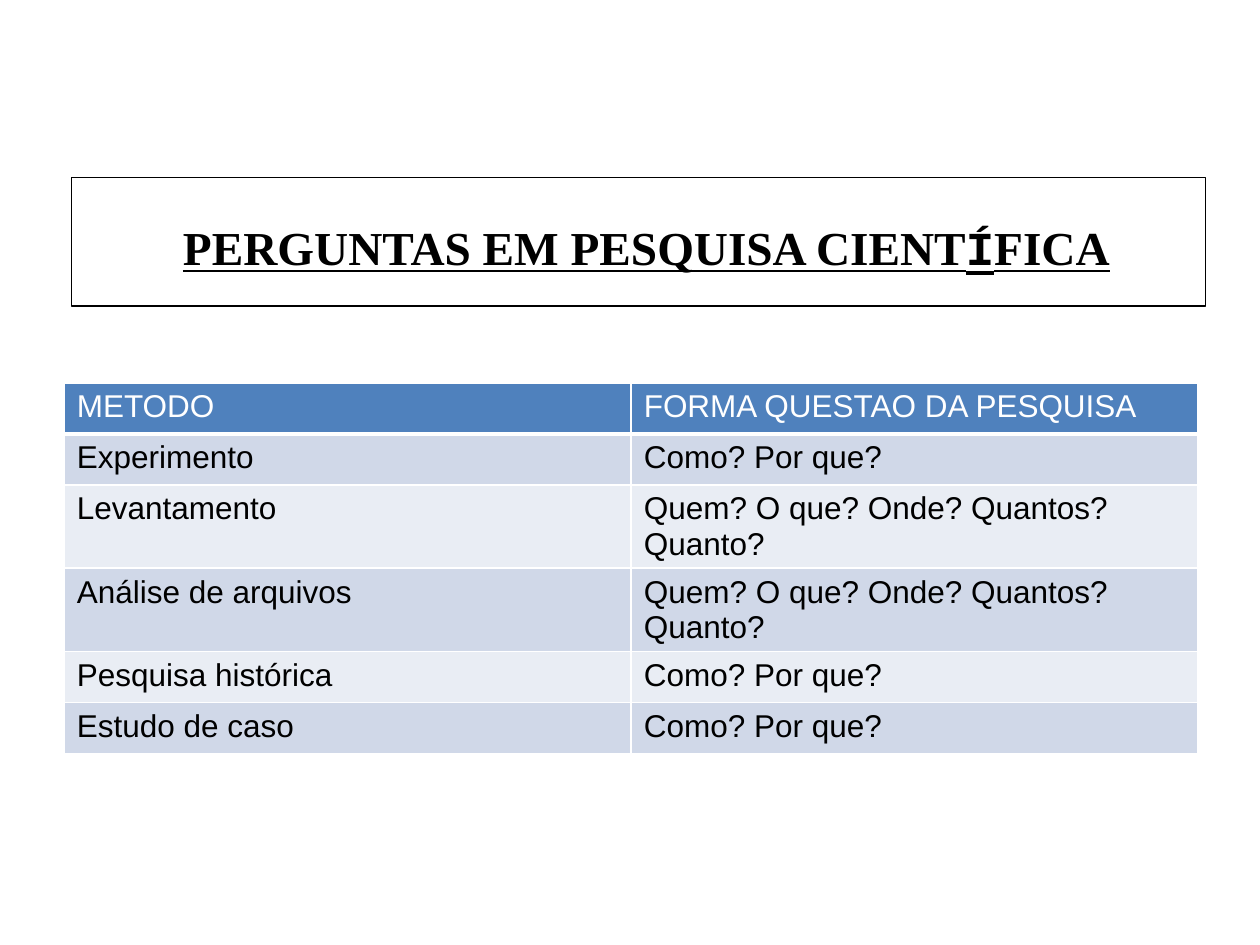
from lxml import etree
from pptx import Presentation
from pptx.dml.color import RGBColor
from pptx.enum.shapes import MSO_SHAPE
from pptx.enum.text import MSO_ANCHOR, PP_ALIGN
from pptx.oxml.ns import qn
from pptx.util import Inches, Pt

RECTANGLE = MSO_SHAPE.RECTANGLE
MIDDLE = MSO_ANCHOR.MIDDLE
CENTER = PP_ALIGN.CENTER

COLORS = {
    "white": "FFFFFF",
    "black": "000000",
    "header": "4F81BD",
    "dark_band": "D0D8E8",
    "light_band": "E9EDF4",
}

TITLE_RUNS = [
    ("PERGUNTAS EM PESQUISA CIENT", "Times New Roman"),
    ("Í", "Courier New"),
    ("FICA", "Times New Roman"),
]
METHOD_ROWS = [
    ("METODO", "FORMA QUESTAO DA PESQUISA"),
    ("Experimento", "Como? Por que?"),
    ("Levantamento", "Quem? O que? Onde? Quantos? Quanto?"),
    ("Análise de arquivos", "Quem? O que? Onde? Quantos? Quanto?"),
    ("Pesquisa histórica", "Como? Por que?"),
    ("Estudo de caso", "Como? Por que?"),
]


def rgb(name):
    return RGBColor.from_string(COLORS[name])


class SlideBuilder:
    title_format = {"size": Pt(27), "bold": True, "underline": True}
    cell_format = {"size": Pt(18), "name": "Arial"}

    def __init__(self, slide):
        self.slide = slide

    def format_font(self, font, values, color):
        for attribute, value in values.items():
            setattr(font, attribute, value)
        font.color.rgb = rgb(color)

    def title_box(self, left, top, width, height, runs):
        shape = self.slide.shapes.add_shape(
            RECTANGLE, Inches(left), Inches(top), Inches(width), Inches(height))
        shape.shadow.inherit = False
        shape.fill.solid()
        shape.fill.fore_color.rgb = rgb("white")
        shape.line.color.rgb = rgb("black")
        shape.line.width = Pt(0.75)
        frame = shape.text_frame
        frame.word_wrap = True
        frame.vertical_anchor = MIDDLE
        frame.margin_top, frame.margin_bottom = Inches(0.13), Inches(0.05)
        paragraph = frame.paragraphs[0]
        paragraph.alignment = CENTER
        properties = paragraph._p.get_or_add_pPr()
        properties.set("marL", str(Inches(0.4)))
        properties.set("indent", str(Inches(-0.28)))
        for text, font_name in runs:
            run = paragraph.add_run()
            run.text = text
            self.format_font(run.font, {**self.title_format, "name": font_name}, "black")

    def cell_borders(self, cell, bottom_width):
        properties = cell._tc.get_or_add_tcPr()
        widths = {"a:lnL": 1, "a:lnR": 1, "a:lnT": 1, "a:lnB": bottom_width}
        # Borders come before the fill in the cell properties
        for position, (tag, width) in enumerate(widths.items()):
            line = etree.Element(qn(tag), w=str(Pt(width)))
            fill = etree.SubElement(line, qn("a:solidFill"))
            etree.SubElement(fill, qn("a:srgbClr"), val=COLORS["white"])
            properties.insert(position, line)

    def table(self, left, top, width, row_height, rows):
        table = self.slide.shapes.add_table(
            len(rows), len(rows[0]), Inches(left), Inches(top),
            Inches(width), Inches(row_height * len(rows))).table
        for row_index, texts in enumerate(rows):
            is_header = row_index == 0
            band = "dark_band" if row_index % 2 else "light_band"
            for column_index, text in enumerate(texts):
                cell = table.cell(row_index, column_index)
                cell.fill.solid()
                cell.fill.fore_color.rgb = rgb("header" if is_header else band)
                self.cell_borders(cell, 3 if is_header else 1)
                run = cell.text_frame.paragraphs[0].add_run()
                run.text = text
                values = {**self.cell_format, "bold": False}
                self.format_font(run.font, values, "white" if is_header else "black")


def main():
    presentation = Presentation()
    presentation.slide_width = Inches(10)
    presentation.slide_height = Inches(7.5)
    slide = presentation.slides.add_slide(presentation.slide_layouts[6])
    builder = SlideBuilder(slide)

    # Framed title
    builder.title_box(0.57, 1.41, 9, 1.02, TITLE_RUNS)

    # Research methods and their questions
    builder.table(0.51, 3.04, 9, 0.405, METHOD_ROWS)

    presentation.save("out.pptx")


if __name__ == "__main__":
    main()
